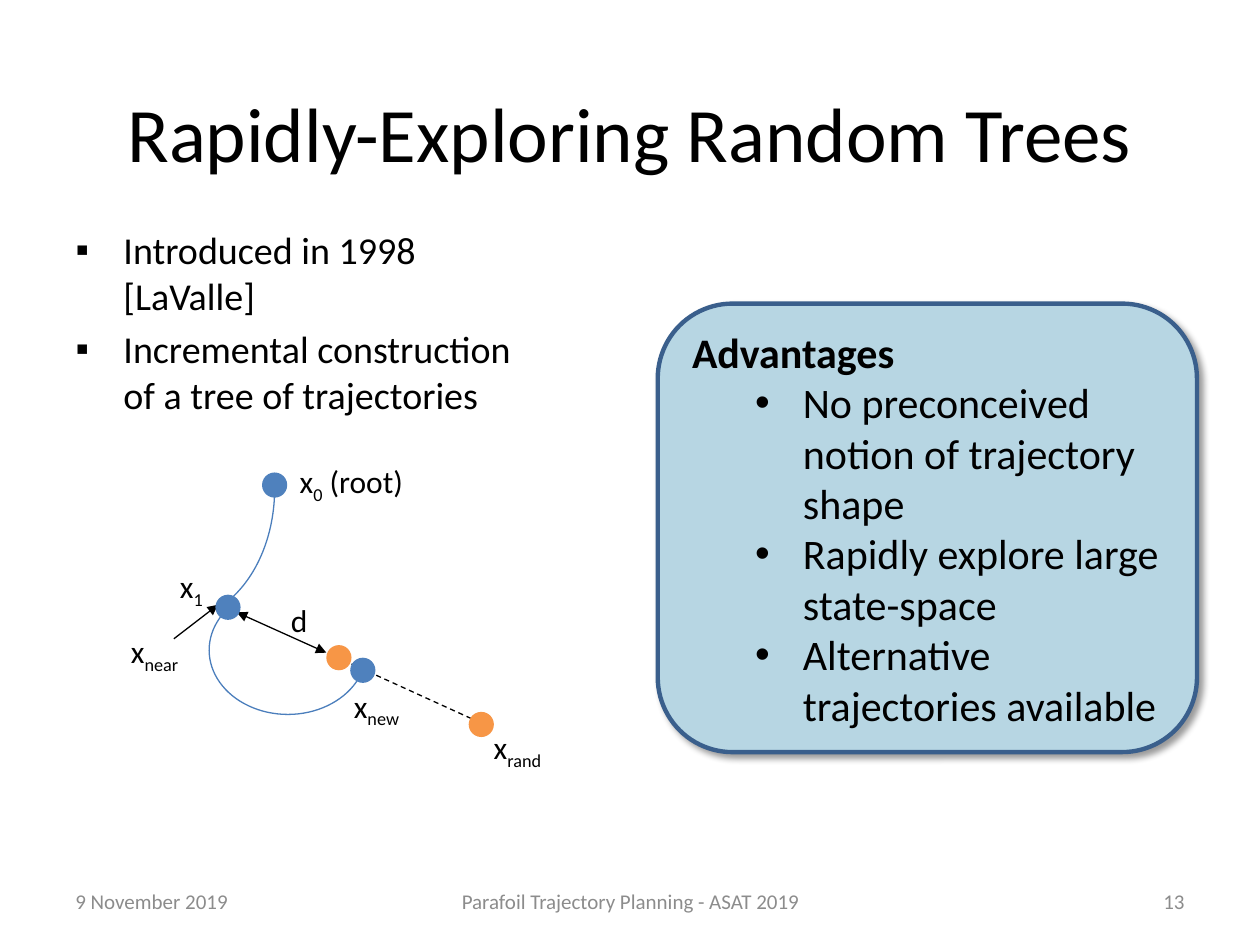
from lxml import etree
from pptx import Presentation
from pptx.dml.color import RGBColor
from pptx.enum.dml import MSO_LINE
from pptx.enum.shapes import MSO_CONNECTOR, MSO_SHAPE
from pptx.enum.text import MSO_ANCHOR, MSO_AUTO_SIZE, PP_ALIGN
from pptx.oxml.ns import qn
from pptx.util import Inches, Pt

LEFT, CENTER, RIGHT = PP_ALIGN.LEFT, PP_ALIGN.CENTER, PP_ALIGN.RIGHT
MIDDLE, TOP = MSO_ANCHOR.MIDDLE, MSO_ANCHOR.TOP
OVAL, ARC, ROUNDED = MSO_SHAPE.OVAL, MSO_SHAPE.ARC, MSO_SHAPE.ROUNDED_RECTANGLE
STRAIGHT, DASH = MSO_CONNECTOR.STRAIGHT, MSO_LINE.DASH
NO_FIT = MSO_AUTO_SIZE.NONE

FONT = "Calibri"
COLORS = {
    "text": "000000",
    "footer": "8C8C8C",
    "panel": "B7D6E3",
    "panel_line": "3A5F8C",
    "node": "4F81BD",
    "sample": "F79646",
    "path": "4B7EBC",
}
NODE_SIZE = 0.2


def rgb(name):
    return RGBColor.from_string(COLORS[name])


def inches(*values):
    return [Inches(value) for value in values]


def format_runs(paragraph, size, color="text", bold=False):
    for run in paragraph.runs:
        run.font.name = FONT
        run.font.size = Pt(size)
        run.font.bold = bold
        run.font.color.rgb = rgb(color)


def add_bullet(paragraph, char, margin, hanging=0.38):
    props = paragraph._p.get_or_add_pPr()
    props.set("marL", str(Inches(margin)))
    props.set("indent", str(-Inches(hanging)))
    etree.SubElement(props, qn("a:buFont"), typeface="Arial")
    etree.SubElement(props, qn("a:buChar"), char=char)


def add_title(slide, box, text):
    title = slide.shapes.title
    title.left, title.top, title.width, title.height = inches(*box)
    frame = title.text_frame
    frame.text = text
    frame.auto_size = NO_FIT
    frame.vertical_anchor = MIDDLE
    frame.paragraphs[0].alignment = CENTER
    format_runs(frame.paragraphs[0], 44)


def add_body(slide, box, items):
    body = slide.placeholders[1]
    body.left, body.top, body.width, body.height = inches(*box)
    frame = body.text_frame
    frame.text = "\n".join(items)
    frame.auto_size = NO_FIT
    for index, paragraph in enumerate(frame.paragraphs):
        add_bullet(paragraph, "▪", 0.38)
        paragraph.space_before = Pt(4.3 if index else 0)
        format_runs(paragraph, 21.7)


def add_advantages(slide, box, heading, items):
    panel = slide.shapes.add_shape(ROUNDED, *inches(*box))
    panel.fill.solid()
    panel.fill.fore_color.rgb = rgb("panel")
    panel.line.color.rgb = rgb("panel_line")
    panel.line.width = Pt(2.5)

    # Soft shadow towards the lower right
    panel.shadow.inherit = False
    effects = panel._element.spPr.find(qn("a:effectLst"))
    shadow = etree.SubElement(
        effects, qn("a:outerShdw"), blurRad=str(Pt(4)), dist=str(Pt(3)),
        dir=str(45 * 60000), algn="tl", rotWithShape="0")
    shade = etree.SubElement(shadow, qn("a:srgbClr"), val="000000")
    etree.SubElement(shade, qn("a:alpha"), val="40000")

    frame = panel.text_frame
    frame.text = "\n".join([heading, *items])
    frame.word_wrap = True
    frame.vertical_anchor = MIDDLE
    for index, paragraph in enumerate(frame.paragraphs):
        paragraph.alignment = LEFT
        if index:
            paragraph.level = 1
            add_bullet(paragraph, "•", 0.88)
        format_runs(paragraph, 24, bold=index == 0)


def add_text(slide, box, parts, size, color="text", align=LEFT, anchor=TOP):
    """Add one line of text; every second part is a subscript."""
    frame = slide.shapes.add_textbox(*inches(*box)).text_frame
    frame.word_wrap = True
    frame.vertical_anchor = anchor
    paragraph = frame.paragraphs[0]
    paragraph.alignment = align
    for index, part in enumerate(parts):
        run = paragraph.add_run()
        run.text = part
        if index % 2:
            run._r.get_or_add_rPr().set("baseline", "-25000")
    format_runs(paragraph, size, color)


def add_node(slide, left, top, color):
    node = slide.shapes.add_shape(OVAL, *inches(left, top, NODE_SIZE, NODE_SIZE))
    node.shadow.inherit = False
    node.fill.solid()
    node.fill.fore_color.rgb = rgb(color)
    node.line.fill.background()


def add_arc(slide, box, start, end):
    arc = slide.shapes.add_shape(ARC, *inches(*box))
    # Adjustments count 0.6 per degree
    arc.adjustments[0], arc.adjustments[1] = start * 0.6, end * 0.6
    arc.shadow.inherit = False
    arc.fill.background()
    arc.line.color.rgb = rgb("path")
    arc.line.width = Pt(0.75)


def add_line(slide, ends, arrows=(), dash=None):
    connector = slide.shapes.add_connector(STRAIGHT, *inches(*ends))
    connector.line.color.rgb = rgb("text")
    connector.line.width = Pt(0.75)
    if dash:
        connector.line.dash_style = dash
    for end in arrows:
        etree.SubElement(connector.line._get_or_add_ln(), qn(f"a:{end}"), type="triangle")
    etree.SubElement(connector._element.spPr, qn("a:effectLst"))


def add_tree(slide, x, y):
    # Trajectories between the nodes
    add_arc(slide, (x, y, 1.53, 2.08), 354.64, 62.94)
    add_arc(slide, (x + 1.01, y + 1.81, 1.25, 1.02), 13.97, 212.25)

    # Distance, pointer to the nearest node, direction of the sample
    for x1, y1, x2, y2, arrows, dash in [
        (1.23, 2.02, 1.94, 2.34, ("headEnd", "tailEnd"), None),
        (0.73, 2.23, 1.08, 1.96, ("tailEnd",), None),
        (2.14, 2.43, 3.15, 2.89, (), DASH),
    ]:
        add_line(slide, (x + x1, y + y1, x + x2, y + y2), arrows, dash)

    for left, top, color in [
        (1.43, 0.91, "node"),
        (1.06, 1.88, "node"),
        (1.94, 2.28, "sample"),
        (3.07, 2.81, "sample"),
        (2.13, 2.38, "node"),
    ]:
        add_node(slide, x + left, y + top, color)

    for left, top, width, parts in [
        (1.63, 0.78, 1.17, ("x", "0", " (root)")),
        (0.68, 1.61, 0.46, ("x", "1")),
        (1.56, 1.88, 0.46, ("d",)),
        (0.29, 2.13, 0.68, ("x", "near")),
        (3.17, 2.89, 1.02, ("x", "rand")),
        (2.06, 2.56, 1.02, ("x", "new")),
    ]:
        add_text(slide, (x + left, y + top, width, 0.4), parts, 18)


def add_footer(slide, top, height):
    for left, width, text, align in [
        (0.5, 2.33, "9 November 2019", LEFT),
        (3.42, 3.17, "Parafoil Trajectory Planning - ASAT 2019", CENTER),
        (7.17, 2.33, "13", RIGHT),
    ]:
        add_text(slide, (left, top, width, height), (text,), 12, "footer", align, MIDDLE)


def main():
    prs = Presentation()
    prs.slide_width, prs.slide_height = inches(10, 7.5)
    slide = prs.slides.add_slide(prs.slide_layouts[1])
    add_title(slide, (0.5, 0.42, 9, 1.25), "Rapidly-Exploring Random Trees")
    add_body(slide, (0.5, 1.75, 3.76, 1.74), [
        "Introduced in 1998 [LaValle]",
        "Incremental construction of a tree of trajectories",
    ])
    add_advantages(slide, (5.22, 2.41, 4.28, 3.56), "Advantages", [
        "No preconceived notion of trajectory shape",
        "Rapidly explore large state-space",
        "Alternative trajectories available",
    ])
    add_tree(slide, 0.65, 2.84)
    add_footer(slide, 6.95, 0.4)
    prs.save("out.pptx")


if __name__ == "__main__":
    main()
